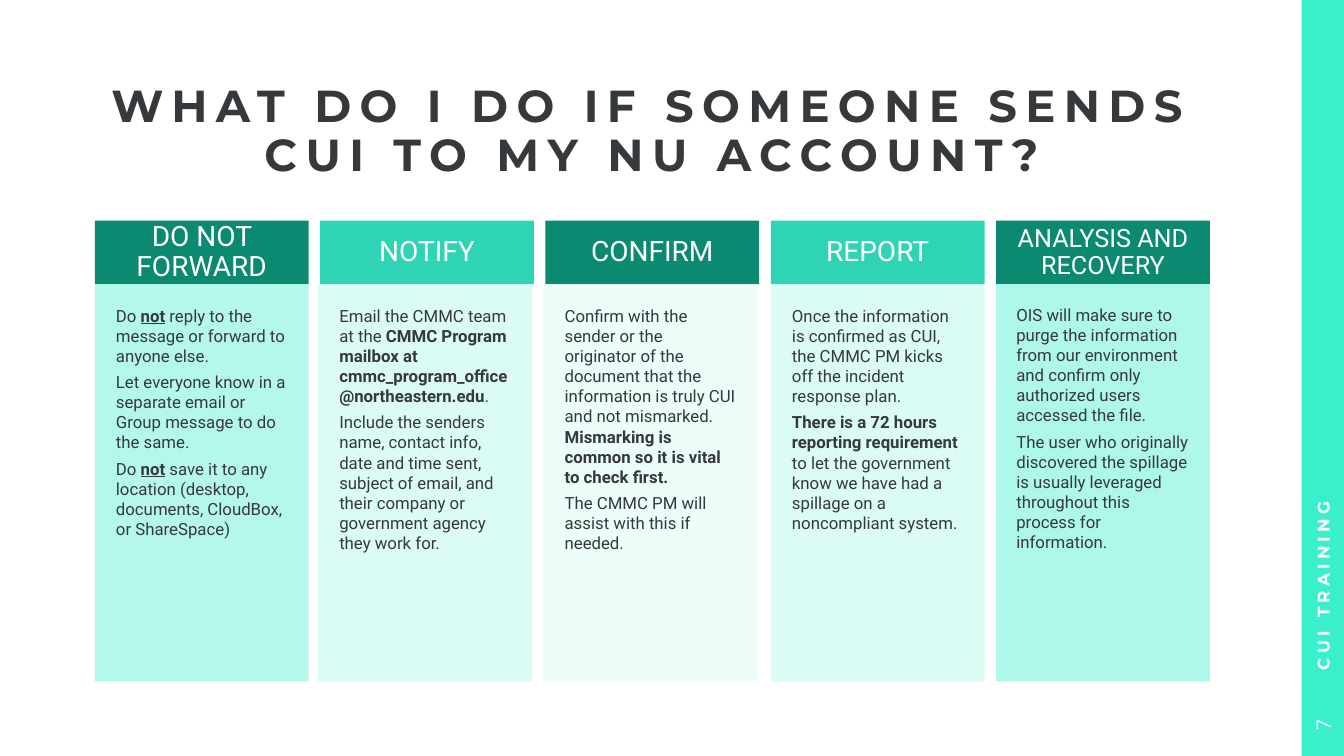
from lxml import etree
from pptx import Presentation
from pptx.dml.color import RGBColor
from pptx.enum.shapes import MSO_SHAPE
from pptx.enum.text import MSO_ANCHOR, PP_ALIGN
from pptx.oxml.ns import qn
from pptx.util import Inches, Pt

RECT = MSO_SHAPE.RECTANGLE
TOP, MIDDLE = MSO_ANCHOR.TOP, MSO_ANCHOR.MIDDLE
LEFT, CENTER = PP_ALIGN.LEFT, PP_ALIGN.CENTER

INK = RGBColor(0x36, 0x39, 0x3B)
WHITE = RGBColor(0xFF, 0xFF, 0xFF)
BAR = RGBColor(0x3A, 0xEF, 0xCC)
DARK = RGBColor(0x0B, 0x89, 0x71)
GREEN = RGBColor(0x11, 0xCE, 0xA9)
MINT = RGBColor(0x89, 0xF5, 0xE0)
PALE = RGBColor(0xB0, 0xF9, 0xEB)
FAINT = RGBColor(0xD8, 0xFC, 0xF5)

TITLE = "WHAT DO I DO IF SOMEONE SENDS CUI TO MY NU ACCOUNT?"
SIDE = "CUI TRAINING"
PAGE = "7"

PLAIN, BOLD, UNDER = "plain", "bold", "under"

STEPS = [
    ("DO NOT FORWARD", 20, (DARK, 100), (MINT, 64), 0, 0.21, [
        [("Do ", PLAIN), ("not", UNDER),
         (" reply to the message or forward to anyone else.", PLAIN)],
        [("Let everyone know in a separate email or Group message to do the same.", PLAIN)],
        [("Do ", PLAIN), ("not", UNDER),
         (" save it to any location (desktop, documents, CloudBox, or ShareSpace)", PLAIN)],
    ]),
    ("NOTIFY", 20, (GREEN, 87), (PALE, 45), -0.02, 0.21, [
        [("Email the CMMC team at the ", PLAIN),
         ("CMMC Program mailbox at cmmc_program_office@northeastern.edu", BOLD),
         (".", PLAIN)],
        [("Include the senders name, contact info, date and time sent, subject of email, "
          "and their company or government agency they work for.", PLAIN)],
    ]),
    ("CONFIRM", 20, (DARK, 100), (FAINT, 44), -0.02, 0.21, [
        [("Confirm with the sender or the originator of the document that the information "
          "is truly CUI and not mismarked. ", PLAIN),
         ("Mismarking is common so it is vital to check first.", BOLD)],
        [("The CMMC PM will assist with this if needed.", PLAIN)],
    ]),
    ("REPORT", 20, (GREEN, 87), (PALE, 45), 0, 0.21, [
        [("Once the information is confirmed as CUI, the CMMC PM kicks off the incident "
          "response plan.", PLAIN)],
        [("There is a 72 hours reporting requirement ", BOLD),
         ("to let the government know we have had a spillage on a noncompliant system.", PLAIN)],
    ]),
    ("ANALYSIS AND RECOVERY", 18, (DARK, 100), (MINT, 68), 0, 0.2, [
        [("OIS will make sure to purge the information from our environment and confirm "
          "only authorized users accessed the file.", PLAIN)],
        [("The user who originally discovered the spillage is usually leveraged throughout "
          "this process for information.", PLAIN)],
    ]),
]

START, PITCH, WIDE = 0.94, 2.235, 2.12
HEAD_TOP, HEAD_TALL = 2.19, 0.63
BODY_TOP, BODY_TALL = HEAD_TOP + HEAD_TALL, 3.94


def add_block(slide, place, color, alpha=100):
    block = slide.shapes.add_shape(RECT, *map(Inches, place))
    block.shadow.inherit = False
    block.fill.solid()
    block.fill.fore_color.rgb = color
    block.line.fill.background()
    if alpha < 100:
        tint = block.fill._xPr.find(qn("a:solidFill"))[0]
        etree.SubElement(tint, qn("a:alpha"), val=str(alpha * 1000))
    return block


def set_frame(frame, anchor, insets):
    frame.word_wrap = True
    frame.vertical_anchor = anchor
    (frame.margin_left, frame.margin_top,
     frame.margin_right, frame.margin_bottom) = map(Inches, insets)


def style(para, align, name, size, color, bold=None):
    para.alignment = align
    font = para.font
    font.name, font.size, font.bold = name, Pt(size), bold
    font.color.rgb = color


def space_out(para, points):
    for run in para.runs:
        run.font._element.set("spc", str(points * 100))


def add_head(slide, left, text, size, fill):
    head = add_block(slide, (left, HEAD_TOP, WIDE, HEAD_TALL), *fill)
    frame = head.text_frame
    set_frame(frame, MIDDLE, [0.17] * 4)
    para = frame.paragraphs[0]
    para.text = text
    para.line_spacing = 0.9
    para.space_after = Pt(size * 0.35)
    style(para, CENTER, "Roboto", size, WHITE)


def add_body(slide, left, fill, inset, paras):
    body = add_block(slide, (left, BODY_TOP, WIDE, BODY_TALL), *fill)
    frame = body.text_frame
    set_frame(frame, TOP, [inset] * 4)
    for i, runs in enumerate(paras):
        para = frame.add_paragraph() if i else frame.paragraphs[0]
        para.space_after = Pt(4.2)
        style(para, LEFT, "Roboto", 12, INK)
        for text, kind in runs:
            run = para.add_run()
            run.text = text
            if kind != PLAIN:
                run.font.bold = True
            if kind == UNDER:
                run.font.underline = True


def add_side(slide, place, text, insets, align, name, size, bold):
    box = slide.shapes.add_textbox(*map(Inches, place))
    box.rotation = 270
    set_frame(box.text_frame, MIDDLE, insets)
    para = box.text_frame.paragraphs[0]
    para.text = text
    style(para, align, name, size, WHITE, bold)
    return para


def main():
    deck = Presentation()
    deck.slide_width, deck.slide_height = Inches(13.33), Inches(7.5)
    slide = deck.slides.add_slide(deck.slide_layouts[5])

    title = slide.shapes.title
    title.left, title.top = Inches(0.93), Inches(0.96)
    title.width, title.height = Inches(11.07), Inches(0.71)
    set_frame(title.text_frame, MIDDLE, [0] * 4)
    para = title.text_frame.paragraphs[0]
    para.text = TITLE
    para.line_spacing = 0.9
    style(para, CENTER, "Montserrat", 32, INK, True)
    space_out(para, 6)

    add_block(slide, (12.91, 0, 0.42, 7.5), BAR)
    for i, (name, size, dark, light, nudge, inset, paras) in enumerate(STEPS):
        left = START + i * PITCH
        add_head(slide, left, name, size, dark)
        add_body(slide, left + nudge, light, inset, paras)

    label = add_side(slide, (9.68, 3.23, 6.88, 0.42), SIDE,
                     (0.23, 0.05, 0.1, 0.05), LEFT, "Montserrat", 12, True)
    space_out(label, 3)
    add_side(slide, (12.81, 6.98, 0.62, 0.42), PAGE,
             (0.1, 0.05, 0.1, 0.05), CENTER, "Roboto", 14, None)
    deck.save("out.pptx")


if __name__ == "__main__":
    main()
